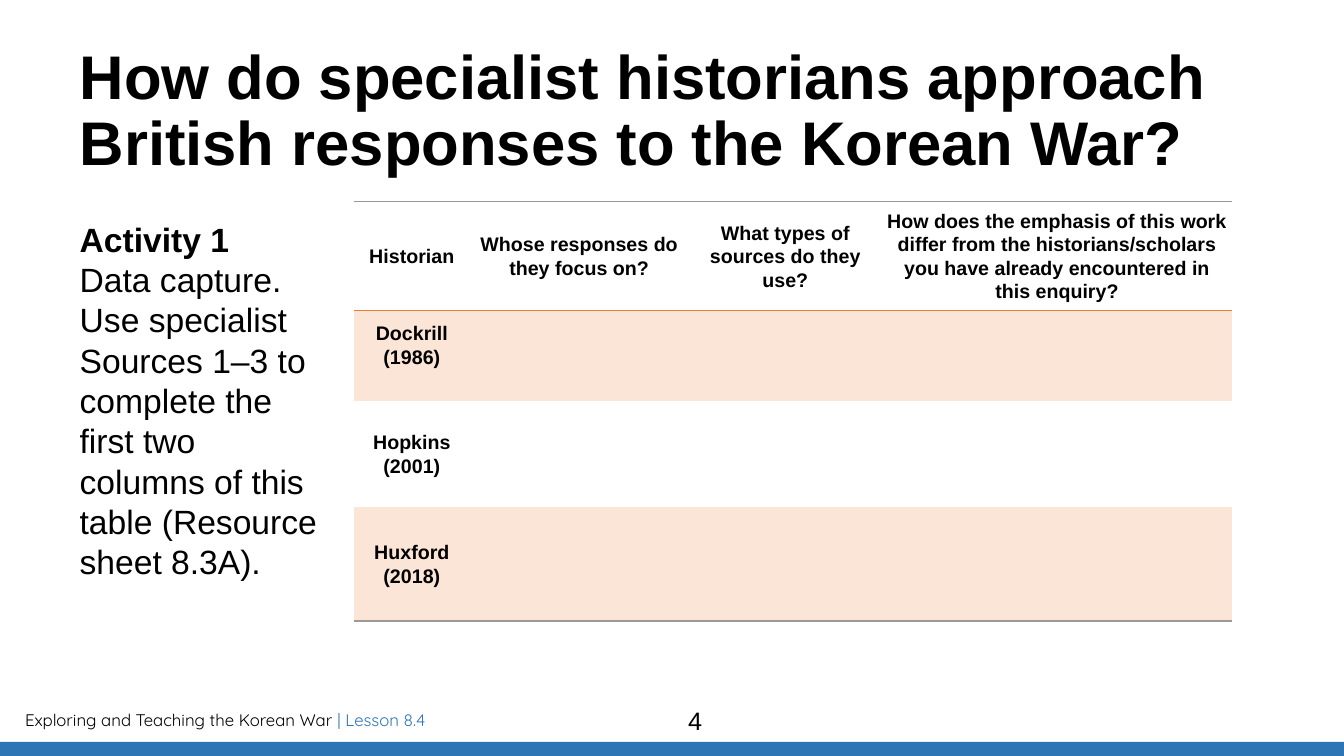
from lxml import etree
from pptx import Presentation
from pptx.dml.color import RGBColor
from pptx.enum.shapes import MSO_SHAPE
from pptx.enum.text import MSO_ANCHOR, PP_ALIGN
from pptx.oxml.ns import qn
from pptx.util import Inches, Pt

RECT = MSO_SHAPE.RECTANGLE
TOP, MIDDLE = MSO_ANCHOR.TOP, MSO_ANCHOR.MIDDLE
CENTER, LEFT = PP_ALIGN.CENTER, PP_ALIGN.LEFT
COLORS = {"text": "000000", "blue": "2E75B6", "orange": "ED7D31",
          "band": "FBE5D6", "rule": "999999"}


def format_runs(p, size, bold=False, align=LEFT, spacing=1.0, font="Arial"):
    p.alignment = align
    p.line_spacing = spacing
    for r in p.runs:
        r.font.name = font
        r.font.size = Pt(size)
        r.font.bold = bold
        r.font.color.rgb = RGBColor.from_string(COLORS["text"])


def add_text(box, text, inset=(0, 0), anchor=TOP):
    """Add a wrapping text box and return its first paragraph."""
    tf = slide.shapes.add_textbox(*map(Inches, box)).text_frame
    tf.word_wrap = True
    tf.vertical_anchor = anchor
    tf.margin_left = tf.margin_right = Inches(inset[0])
    tf.margin_top = tf.margin_bottom = Inches(inset[1])
    tf.text = text
    return tf.paragraphs[0]


prs = Presentation()
prs.slide_width, prs.slide_height = Inches(13.33), Inches(7.5)
slide = prs.slides.add_slide(prs.slide_layouts[6])

# Footer
p = add_text((0.15, 6.99, 7.82, 0.3), "Exploring and Teaching the Korean War ", (0.1, 0.05))
r = p.add_run()
r.text = "| Lesson 8.4"
format_runs(p, 12, font="Quicksand")
r.font.color.rgb = RGBColor.from_string(COLORS["blue"])

bar = slide.shapes.add_shape(RECT, 0, Inches(7.36), prs.slide_width, Inches(0.15))
bar.shadow.inherit = False
bar.fill.solid()
bar.fill.fore_color.rgb = RGBColor.from_string(COLORS["blue"])
bar.line.fill.background()

# Title and activity
p = add_text((0.79, 0.39, 11.5, 1.45),
             "How do specialist historians approach British responses to the Korean War?",
             anchor=MIDDLE)
format_runs(p, 44, bold=True, spacing=0.9)

p = add_text((0.79, 2.17, 2.39, 4.79), "Activity 1")
p.add_line_break()
p.add_run().text = ("Data capture. Use specialist Sources 1–3 to complete the first two "
                    "columns of this table (Resource sheet 8.3A).")
format_runs(p, 24)
p.runs[0].font.bold = True

# Table of historians
column_widths = [1.15, 2.17, 1.92, 3.47]
row_heights = [1.08, 0.9, 1.05, 1.13]
headers = ["Historian", "Whose responses do they focus on?",
           "What types of sources do they use?",
           "How does the emphasis of this work differ from the historians/scholars "
           "you have already encountered in this enquiry?"]
historians = ["Dockrill (1986)", "Hopkins (2001)", "Huxford\n(2018)"]
rows = [headers] + [[name, "", "", ""] for name in historians]
# Borders by row: (tag, colour, width in points)
borders = {0: [("a:lnT", "rule", 1), ("a:lnB", "orange", 1)],
           1: [("a:lnT", "orange", 1)],
           3: [("a:lnB", "rule", 1)]}

frame = slide.shapes.add_table(4, 4, Inches(3.51), Inches(2), Inches(8.71), Inches(4.16))
table = frame.table
table.first_row = table.horz_banding = False
for column, width in zip(table.columns, column_widths):
    column.width = Inches(width)
for i, (row, height) in enumerate(zip(table.rows, row_heights)):
    row.height = Inches(height)
    for cell, text in zip(row.cells, rows[i]):
        cell.text = text
        cell.vertical_anchor = MIDDLE
        cell.margin_left = cell.margin_right = Inches(0.05)
        cell.margin_top = 0
        cell.margin_bottom = Inches(0.22 if i == 1 else 0)
        for p in cell.text_frame.paragraphs:
            format_runs(p, 14, bold=True, align=CENTER, spacing=1.07)
        tcPr = cell._tc.get_or_add_tcPr()
        drawn = {tag: (color, width) for tag, color, width in borders.get(i, [])}
        for tag in ("a:lnL", "a:lnR", "a:lnT", "a:lnB"):
            color, width = drawn.get(tag, (None, 0))
            ln = etree.SubElement(tcPr, qn(tag), w=str(Pt(width)))
            if color:
                fill = etree.SubElement(ln, qn("a:solidFill"))
                etree.SubElement(fill, qn("a:srgbClr"), val=COLORS[color])
            else:
                etree.SubElement(ln, qn("a:noFill"))
        if i % 2:
            cell.fill.solid()
            cell.fill.fore_color.rgb = RGBColor.from_string(COLORS["band"])
        else:
            cell.fill.background()

# Page number
p = add_text((4.36, 6.95, 5.07, 0.4), "4", (0.1, 0.05), MIDDLE)
format_runs(p, 18, align=CENTER)

prs.save("out.pptx")
